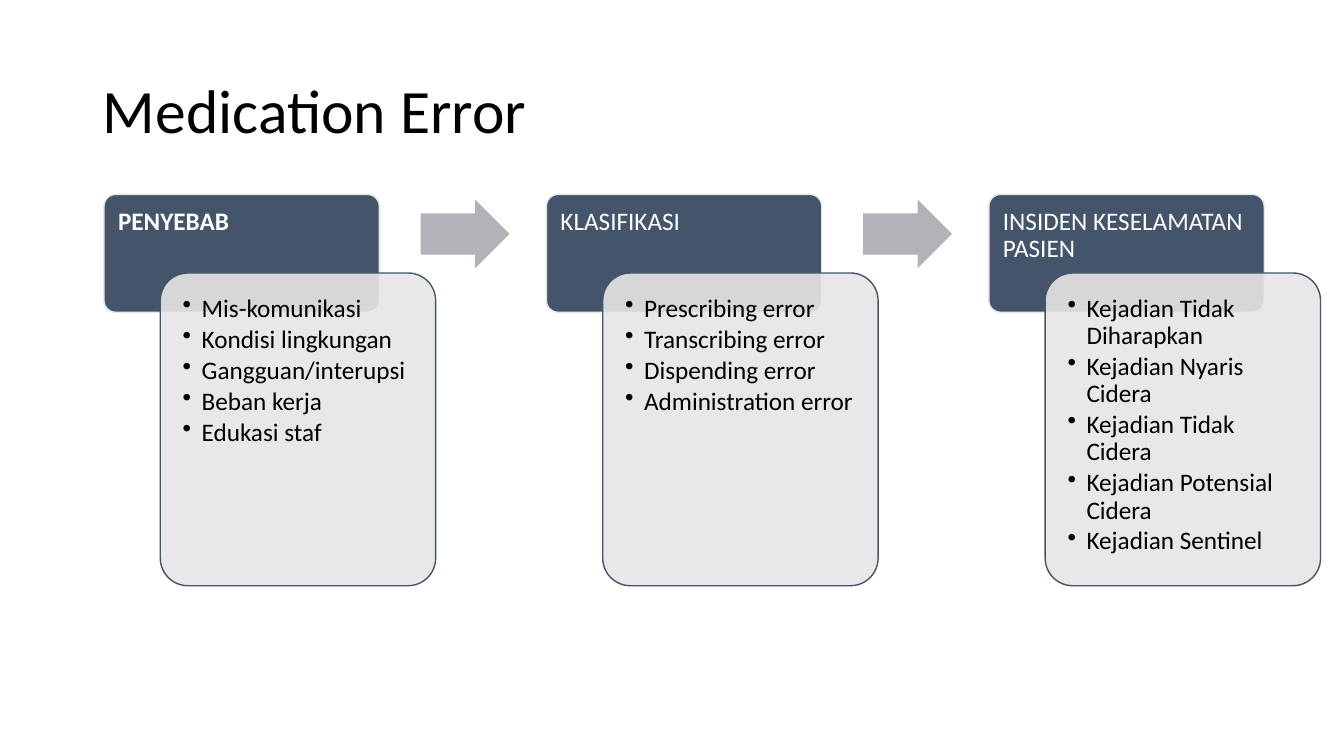
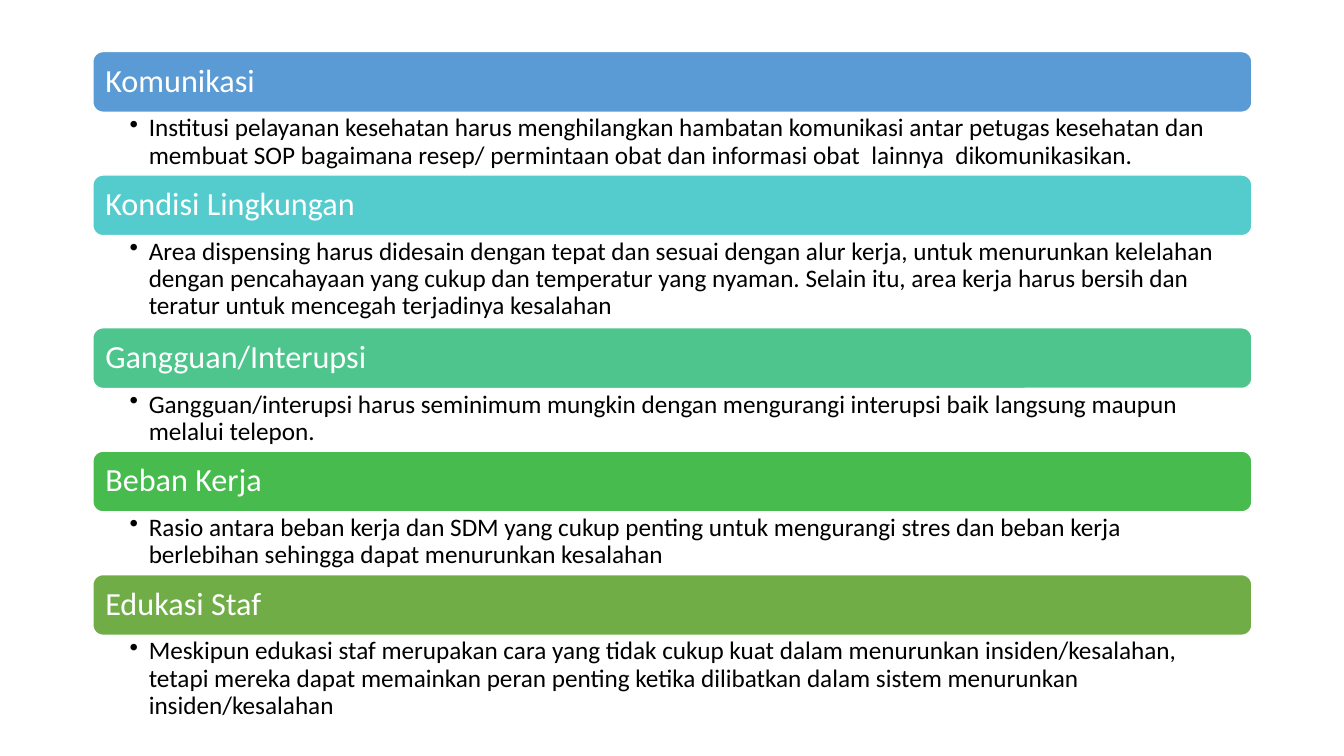
import dataclasses

import pptx
import pptx.dml.color
import pptx.enum.shapes
import pptx.enum.text
import pptx.oxml
import pptx.oxml.ns
import pptx.util

Cm, Pt = pptx.util.Cm, pptx.util.Pt
SHAPE = pptx.enum.shapes.MSO_SHAPE
ANCHOR = pptx.enum.text.MSO_ANCHOR


@dataclasses.dataclass(frozen=True)
class Theme:
    font: str = "Calibri"
    title_size: float = 44
    bar_size: float = 23
    body_size: float = 18
    line_spacing: float = 0.9
    item_gap: float = 2.7
    bullet_indent: float = 0.48
    text: str = "000000"
    white: str = "FFFFFF"
    navy: str = "44546A"
    pale: str = "E7E6E6"
    arrow: str = "B0B4B9"


THEME = Theme()

# heading, heading is bold, items
STAGES = [
    ("PENYEBAB", True,
     ["Mis-komunikasi", "Kondisi lingkungan", "Gangguan/interupsi",
      "Beban kerja", "Edukasi staf"]),
    ("KLASIFIKASI", False,
     ["Prescribing error", "Transcribing error", "Dispending error",
      "Administration error"]),
    ("INSIDEN KESELAMATAN PASIEN", False,
     ["Kejadian Tidak Diharapkan", "Kejadian Nyaris Cidera",
      "Kejadian Tidak Cidera", "Kejadian Potensial Cidera",
      "Kejadian Sentinel"]),
]

# heading, bar colour, lines of explanation, explanation
TOPICS = [
    ("Komunikasi", "5B9BD5", 2,
     "Institusi pelayanan kesehatan harus menghilangkan hambatan komunikasi "
     "antar petugas kesehatan dan membuat SOP bagaimana resep/ permintaan obat "
     "dan informasi obat  lainnya  dikomunikasikan."),
    ("Kondisi Lingkungan", "54CCCD", 3,
     "Area dispensing harus didesain dengan tepat dan sesuai dengan alur kerja, "
     "untuk menurunkan kelelahan dengan pencahayaan yang cukup dan temperatur "
     "yang nyaman. Selain itu, area kerja harus bersih dan teratur untuk "
     "mencegah terjadinya kesalahan"),
    ("Gangguan/Interupsi", "4DC58D", 2,
     "Gangguan/interupsi harus seminimum mungkin dengan mengurangi interupsi "
     "baik langsung maupun melalui telepon."),
    ("Beban Kerja", "48BB4F", 2,
     "Rasio antara beban kerja dan SDM yang cukup penting untuk mengurangi "
     "stres dan beban kerja berlebihan sehingga dapat menurunkan kesalahan"),
    ("Edukasi Staf", "70AD47", 3,
     "Meskipun edukasi staf merupakan cara yang tidak cukup kuat dalam "
     "menurunkan insiden/kesalahan, tetapi mereka dapat memainkan peran penting "
     "ketika dilibatkan dalam sistem menurunkan insiden/kesalahan"),
]


def rgb(value):
    return pptx.dml.color.RGBColor.from_string(value)


def add_bullet(paragraph):
    properties = paragraph._p.get_or_add_pPr()
    indent = Cm(THEME.bullet_indent)
    properties.set("marL", str(indent))
    properties.set("indent", str(-indent))
    properties.append(pptx.oxml.parse_xml(
        f'<a:buChar {pptx.oxml.ns.nsdecls("a")} char="•"/>'))


def set_opacity(shape, percent):
    color = shape.fill._xPr.find(".//" + pptx.oxml.ns.qn("a:srgbClr"))
    color.append(pptx.oxml.parse_xml(
        f'<a:alpha {pptx.oxml.ns.nsdecls("a")} val="{percent * 1000}"/>'))


def write(shape, lines, size, color, insets=None, anchor=ANCHOR.TOP,
          bold=False, bullets=False):
    """Fill a shape with one paragraph per line; insets are in cm (l, t, r, b)."""
    frame = shape.text_frame
    frame.word_wrap = True
    frame.auto_size = pptx.enum.text.MSO_AUTO_SIZE.NONE
    frame.vertical_anchor = anchor
    if insets:
        (frame.margin_left, frame.margin_top,
         frame.margin_right, frame.margin_bottom) = map(Cm, insets)
    for index, line in enumerate(lines):
        paragraph = frame.add_paragraph() if index else frame.paragraphs[0]
        paragraph.alignment = pptx.enum.text.PP_ALIGN.LEFT
        paragraph.line_spacing = THEME.line_spacing
        paragraph.space_before = Pt(0)
        paragraph.space_after = Pt(THEME.item_gap)
        if bullets:
            add_bullet(paragraph)
        run = paragraph.add_run()
        run.text = line
        run.font.name = THEME.font
        run.font.size = Pt(size)
        run.font.bold = bold
        run.font.color.rgb = rgb(color)


def add_block(slide, kind, box, fill, outline=None, adjustments=()):
    """Add a flat preset shape; box is left, top, width, height in cm."""
    block = slide.shapes.add_shape(kind, *map(Cm, box))
    block.shadow.inherit = False
    block.fill.solid()
    block.fill.fore_color.rgb = rgb(fill)
    if outline:
        block.line.color.rgb = rgb(outline)
        block.line.width = Pt(1)
    else:
        block.line.fill.background()
    for index, value in enumerate(adjustments):
        block.adjustments[index] = value
    return block


def add_title(slide, text):
    title = slide.shapes.title
    title.left, title.top, title.width, title.height = map(
        Cm, (2.34, 1.02, 29.21, 3.68))
    write(title, [text], THEME.title_size, THEME.text, anchor=ANCHOR.MIDDLE)


def add_stage(slide, left, heading, bold, items):
    top, width = 4.9, 6.94
    header = add_block(slide, SHAPE.ROUNDED_RECTANGLE, (left, top, width, 2.97),
                       THEME.navy, THEME.pale, [0.1])
    write(header, [heading], THEME.body_size, THEME.white,
          (0.27, 0.27, 0.27, 0.18), bold=bold)
    panel = add_block(slide, SHAPE.ROUNDED_RECTANGLE,
                      (left + 1.42, top + 1.98, width, 7.88),
                      THEME.pale, THEME.navy, [0.1])
    set_opacity(panel, 90)
    write(panel, items, THEME.body_size, THEME.text, (0.36,) * 4, bullets=True)


def add_topic(slide, top, heading, color, line_count, explanation):
    """Add a heading bar with its explanation and return the bottom edge."""
    left, width, bar_height = 2.34, 29.21, 1.53
    body_height = {2: 1.58, 3: 2.32}[line_count]
    bar = add_block(slide, SHAPE.ROUNDED_RECTANGLE,
                    (left, top, width, bar_height), color, THEME.white)
    write(bar, [heading], THEME.bar_size, THEME.white, (0.24,) * 4,
          anchor=ANCHOR.MIDDLE)
    body_top = top + bar_height
    body = slide.shapes.add_textbox(
        *map(Cm, (left, body_top, width, body_height)))
    write(body, [explanation], THEME.body_size, THEME.text,
          (0.93, 0.07, 0.45, 0.07), bullets=True)
    return body_top + body_height


def build_medication_error(deck):
    slide = deck.slides.add_slide(deck.slide_layouts[5])
    add_title(slide, "Medication Error")
    first_left, pitch = 2.62, 11.15
    for index, stage in enumerate(STAGES):
        left = first_left + index * pitch
        add_stage(slide, left, *stage)
        if index < len(STAGES) - 1:
            add_block(slide, SHAPE.RIGHT_ARROW, (left + 7.98, 5.03, 2.24, 1.73),
                      THEME.arrow, adjustments=[0.6, 0.5])


def build_prevention(deck):
    slide = deck.slides.add_slide(deck.slide_layouts[6])
    top = 1.3
    for topic in TOPICS:
        top = add_topic(slide, top, *topic)


def main():
    deck = pptx.Presentation()
    deck.slide_width, deck.slide_height = Cm(33.87), Cm(19.05)
    build_medication_error(deck)
    build_prevention(deck)
    deck.save("out.pptx")


if __name__ == "__main__":
    main()
